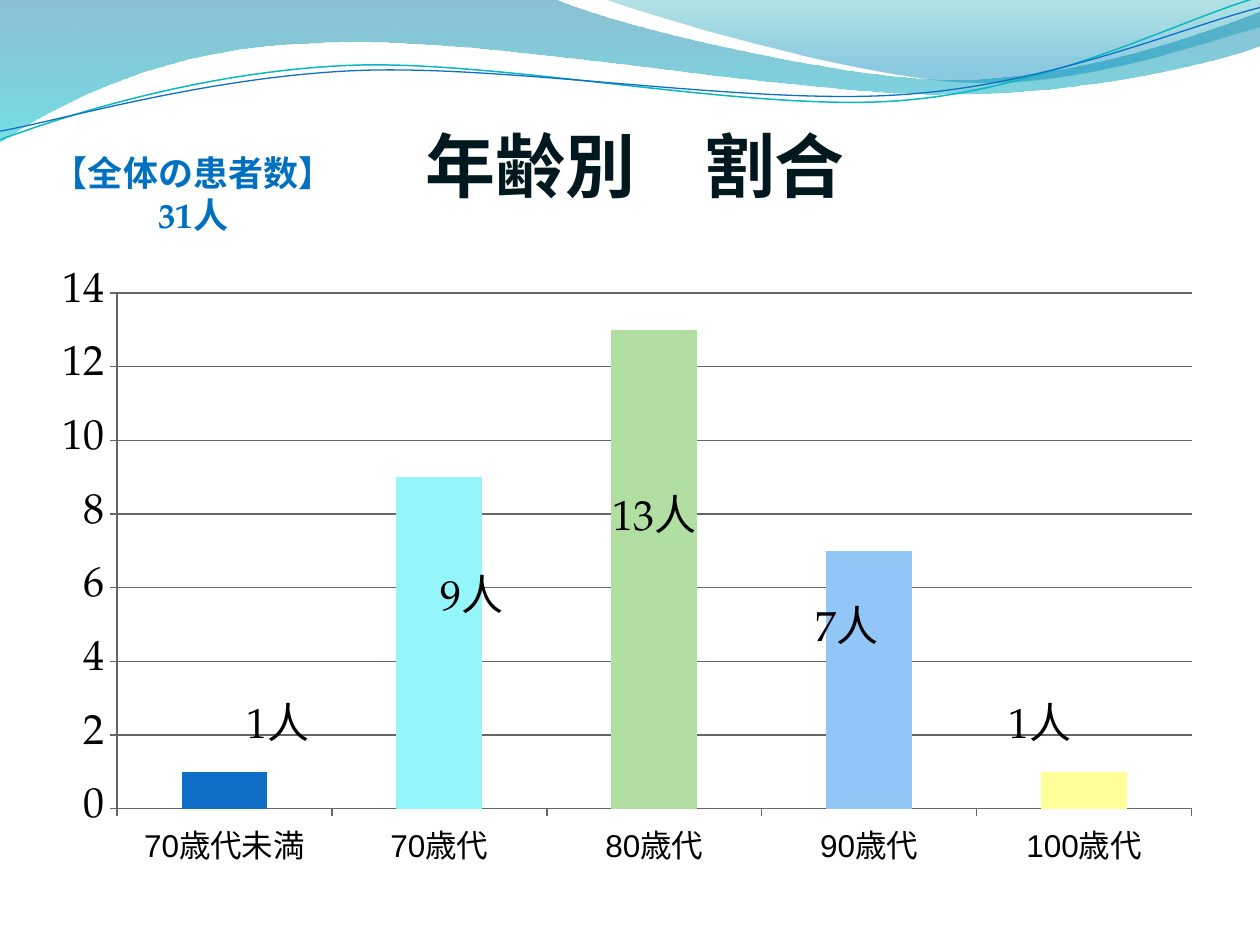
from lxml import etree
from pptx import Presentation
from pptx.chart.data import CategoryChartData
from pptx.dml.color import RGBColor
from pptx.enum.chart import XL_CHART_TYPE, XL_TICK_MARK
from pptx.enum.text import MSO_ANCHOR, MSO_AUTO_SIZE, PP_ALIGN
from pptx.oxml import parse_xml
from pptx.oxml.ns import nsdecls, qn
from pptx.util import Pt

COLUMNS = XL_CHART_TYPE.COLUMN_CLUSTERED
TICK_OUT = XL_TICK_MARK.OUTSIDE
TOP, BOTTOM = MSO_ANCHOR.TOP, MSO_ANCHOR.BOTTOM
FIT_SHAPE, FIT_NONE = MSO_AUTO_SIZE.SHAPE_TO_FIT_TEXT, MSO_AUTO_SIZE.NONE
CENTER = PP_ALIGN.CENTER

SERIF, SANS = "TeX Gyre Pagella", "Arial"
COLORS = {
    "title": "01181F", "total": "0070C0", "text": "000000", "axis": "666666",
    "teal_line": "0AB8BF", "blue_line": "0F6FC6",
    "wave_blue": "0074A1", "wave_cyan": "00C6CF",
    "crest_teal": "00A1A9", "crest_blue": "008BBF",
}
BAR_COLORS = ["0F6FC6", "94F5FA", "B0DFA1", "91C6F7", "FFFF99"]
AGE_GROUPS = ["70歳代未満", "70歳代", "80歳代", "90歳代", "100歳代"]
PATIENTS = [1, 9, 13, 7, 1]

# Outlines in points: one pair is a corner, three pairs are a Bezier curve
WAVE = [
    [(0, 0)], [(316.8, -0.7)],
    [(342.7, 12.2), (478.1, 45.4), (545.8, 45.4)],
    [(614.2, 45.4), (689.8, 18.7), (720, 6.5)],
    [(720.7, 25.9)],
    [(707.8, 31.7), (626.4, 54.7), (537.1, 54)],
    [(447.8, 54), (275, 20.2), (185, 24.5)],
    [(92.9, 25.9), (33.1, 59.8), (-0.7, 81.4)],
]
CREST = [
    [(344.9, -0.7)],
    [(366.5, 7.9), (491, 44.6), (553.7, 46.8)],
    [(616.3, 49.7), (691.9, 23), (720, 15.1)],
    [(720, 0)],
]
TEAL_CURVE = [
    [(0, 79.9)],
    [(34.6, 67), (113.8, 41), (199.4, 37.4)],
    [(284.4, 33.8), (427, 64.1), (513.4, 57.6)],
    [(599.8, 51.1), (675.4, 10.8), (718.6, -1.4)],
]
BLUE_CURVE = [
    [(0, 74.9)],
    [(33.8, 69.1), (118.1, 43.9), (203.8, 40.3)],
    [(290.2, 36.7), (429.8, 60.5), (516.2, 54)],
    [(601.9, 48.2), (676.8, 15.1), (720, 4.3)],
]
# Left, top and width of each bar's label
LABEL_PLACES = [(127.4, 394.6, 62.6), (241.2, 321.1, 56.9), (342.7, 275.8, 62.6),
                (452.9, 339.1, 62.6), (563, 394.6, 62.6)]
UNITS = 100  # outline units in a point


def color(name):
    return RGBColor.from_string(COLORS[name])


def set_values(target, values):
    for name, value in values.items():
        setattr(target, name, value)


def add_outline(page, outline, close):
    """Draw the outline through its corners, then bend the curved parts."""
    parts = [[(round(x * UNITS), round(y * UNITS)) for x, y in part] for part in outline]
    corners = [part[-1] for part in parts]
    builder = page.shapes.build_freeform(*corners[0], scale=Pt(1) / UNITS)
    builder.add_line_segments(corners[1:], close=close)
    shape = builder.convert_to_shape()
    shape.shadow.inherit = False

    left, top = (min(values) for values in zip(*corners))
    segments = list(shape._element.iter(qn("a:lnTo")))
    for segment, part in zip(segments, parts[1:]):
        if len(part) == 3:
            segment.tag = qn("a:cubicBezTo")
            segment.clear()
            for x, y in part:
                etree.SubElement(segment, qn("a:pt"), x=str(x - left), y=str(y - top))
    return shape


def add_gradient_area(page, outline, stops):
    shape = add_outline(page, outline, True)
    shape.line.fill.background()
    shape.fill.gradient()
    shape.fill.gradient_angle = 270
    for stop, (position, name, _) in zip(shape.fill.gradient_stops, stops):
        stop.position = position
        stop.color.rgb = color(name)
    tints = shape._element.spPr.iter(qn("a:srgbClr"))
    for tint, (_, _, opacity) in zip(tints, stops):
        etree.SubElement(tint, qn("a:alpha"), val=str(opacity * 1000))


def add_curve(page, outline, name, width):
    shape = add_outline(page, outline, False)
    shape.fill.background()
    shape.line.color.rgb = color(name)
    shape.line.width = Pt(width)


def add_text(page, place, text, font, name, anchor=TOP, fit=FIT_SHAPE, margins=None):
    box = page.shapes.add_textbox(*map(Pt, place))
    frame = box.text_frame
    set_values(frame, {"word_wrap": True, "auto_size": fit, "vertical_anchor": anchor,
                       **(margins or {})})
    para = frame.paragraphs[0]
    para.text = text
    para.alignment = CENTER
    for span in para.runs:
        set_values(span.font, font)
        span.font.color.rgb = color(name)


def style_line(line):
    line.color.rgb = color("axis")
    line.width = Pt(0.75)


def format_axis(axis, font):
    axis.major_tick_mark = TICK_OUT
    set_values(axis.tick_labels.font, font)
    axis.tick_labels.font.color.rgb = color("text")
    style_line(axis.format.line)


def add_age_chart(page, place):
    data = CategoryChartData()
    data.categories = AGE_GROUPS
    data.add_series("Series 1", PATIENTS)
    chart = page.shapes.add_chart(COLUMNS, *map(Pt, place), data).chart
    set_values(chart, {"has_legend": False, "has_title": False})
    set_values(chart.font, {"name": SERIF, "size": Pt(10)})

    format_axis(chart.category_axis, {"name": SANS, "size": Pt(18)})
    scale = chart.value_axis
    format_axis(scale, {"name": SERIF, "size": Pt(24)})
    set_values(scale, {"minimum_scale": 0, "maximum_scale": 14, "major_unit": 2,
                       "has_major_gridlines": True})
    style_line(scale.major_gridlines.format.line)

    plot = chart.plots[0]
    set_values(plot, {"gap_width": 150, "vary_by_categories": False})
    for index, bar_color in enumerate(BAR_COLORS):
        fill = plot.series[0].points[index].format.fill
        fill.solid()
        fill.fore_color.rgb = RGBColor.from_string(bar_color)
    fix_plot_area(chart, {"x": 0.066, "y": 0.054, "w": 0.914, "h": 0.832})


def fix_plot_area(chart, fractions):
    area = chart._chartSpace.find(".//" + qn("c:plotArea"))
    for layout in area.findall(qn("c:layout")):
        area.remove(layout)
    sizes = "".join(f'<c:{key} val="{value}"/>' for key, value in fractions.items())
    area.insert(0, parse_xml(
        f'<c:layout {nsdecls("c")}><c:manualLayout><c:layoutTarget val="inner"/>'
        f'<c:xMode val="edge"/><c:yMode val="edge"/>{sizes}</c:manualLayout></c:layout>'))


def main():
    deck = Presentation()
    set_values(deck, {"slide_width": Pt(720), "slide_height": Pt(540)})
    page = deck.slides.add_slide(deck.slide_layouts[6])

    # Wave decoration
    add_gradient_area(page, WAVE, [(0, "wave_blue", 45), (1, "wave_cyan", 55)])
    add_gradient_area(page, CREST, [(0, "crest_teal", 30), (0.8, "crest_blue", 45)])
    add_curve(page, TEAL_CURVE, "teal_line", 0.85)
    add_curve(page, BLUE_CURVE, "blue_line", 0.75)

    # Title and patient total
    add_text(page, (38.9, 33.8, 648, 84.2), "年齢別　割合",
             {"name": SANS, "size": Pt(40), "bold": True}, "title", BOTTOM, FIT_NONE,
             {"margin_left": 0, "margin_right": 0, "margin_bottom": 0})
    add_text(page, (22.6, 82.8, 175.7, 55.4), "【全体の患者数】\v31人",
             {"name": SERIF, "size": Pt(20), "bold": True}, "total")

    # Chart and the labels of its bars
    add_age_chart(page, (22.6, 148.3, 671.8, 354.2))
    for count, (left, top, width) in zip(PATIENTS, LABEL_PLACES):
        add_text(page, (left, top, width, 36), f"{count}人",
                 {"name": SERIF, "size": Pt(24)}, "text")

    deck.save("out.pptx")


if __name__ == "__main__":
    main()
